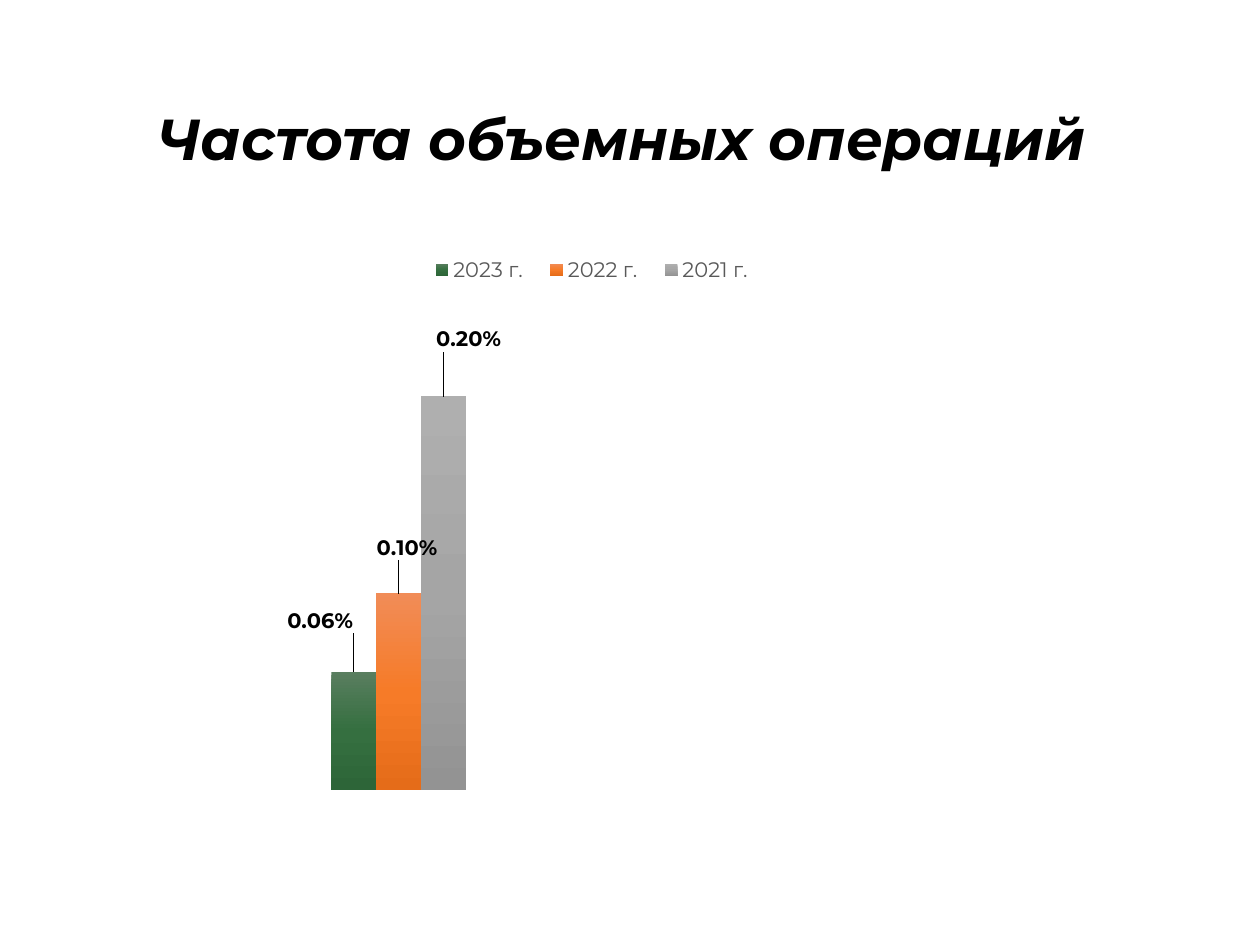
from lxml.etree import SubElement
from pptx import Presentation
from pptx.chart.data import CategoryChartData
from pptx.dml.color import RGBColor
from pptx.enum.chart import XL_CHART_TYPE, XL_LABEL_POSITION, XL_LEGEND_POSITION
from pptx.enum.text import MSO_ANCHOR, PP_ALIGN
from pptx.oxml import parse_xml
from pptx.oxml.ns import nsdecls, qn
from pptx.util import Inches, Pt

BLACK = RGBColor(0x00, 0x00, 0x00)
GREY = RGBColor(0x59, 0x59, 0x59)
GREENS = [RGBColor(0x59, 0x7E, 0x5F), RGBColor(0x35, 0x6F, 0x40), RGBColor(0x2D, 0x65, 0x38)]
ORANGES = [RGBColor(0xF1, 0x8C, 0x57), RGBColor(0xF6, 0x7B, 0x28), RGBColor(0xE5, 0x6C, 0x19)]
GREYS = [RGBColor(0xAF, 0xAF, 0xAF), RGBColor(0xA5, 0xA5, 0xA5), RGBColor(0x93, 0x93, 0x93)]
SERIES = [
    ("2023 г.", 0.0006, GREENS, (-0.04, -0.06)),
    ("2022 г.", 0.001, ORANGES, (0.01, -0.05)),
    ("2021 г.", 0.002, GREYS, (0.03, -0.07)),
]
CATEGORIES = ["1", "2", "3", "4"]
PERCENT = "0.00%"


def set_font(font, size, color=BLACK, name="Montserrat", bold=False, italic=False):
    font.size, font.name, font.bold, font.italic = Pt(size), name, bold, italic
    font.color.rgb = color


def write(tf, text, align=PP_ALIGN.CENTER, spacing=0.9, **style):
    p = tf.paragraphs[0]
    p.alignment, p.line_spacing = align, spacing
    r = p.add_run()
    r.text = text
    set_font(r.font, **style)


def manual_layout(**values):
    layout = parse_xml(f"<c:layout {nsdecls('c')}><c:manualLayout/></c:layout>")
    for tag, val in values.items():
        SubElement(layout[0], qn(f"c:{tag}"), val=str(val))
    return layout


def fill_gradient(sp_pr, colors):
    stops = "".join(
        f'<a:gs pos="{i * 50000}"><a:srgbClr val="{c}"/></a:gs>' for i, c in enumerate(colors)
    )
    sp_pr.insert(0, parse_xml(
        f"<a:gradFill {nsdecls('a')}><a:gsLst>{stops}</a:gsLst>"
        '<a:lin ang="5400000" scaled="0"/></a:gradFill>'
    ))


class Deck:
    """Holds the slide and places elements by percent of its size."""

    def __init__(self):
        self.prs = Presentation()
        self.prs.slide_width, self.prs.slide_height = Inches(10), Inches(7.5)
        self.s = self.prs.slides.add_slide(self.prs.slide_layouts[6])

    def box(self, x, y, w, h):
        width, height = self.prs.slide_width, self.prs.slide_height
        return [int(share * side / 100) for share, side in zip((x, y, w, h), (width, height) * 2)]

    def title(self, text, *area):
        tf = self.s.shapes.add_textbox(*self.box(*area)).text_frame
        tf.word_wrap, tf.vertical_anchor = True, MSO_ANCHOR.MIDDLE
        write(tf, text, size=33, bold=True, italic=True)

    def column_chart(self, *area):
        data = CategoryChartData(number_format=PERCENT)
        data.categories = CATEGORIES
        for name, value, *_ in SERIES:
            data.add_series(name, [value] + [None] * (len(CATEGORIES) - 1))
        chart = self.s.shapes.add_chart(
            XL_CHART_TYPE.COLUMN_CLUSTERED, *self.box(*area), data
        ).chart
        set_font(chart.font, 10, name="Calibri")
        chart.has_title = False
        self.hide_axes(chart)
        self.legend(chart)
        plot = chart.plots[0]
        plot.gap_width, plot.overlap, plot.vary_by_categories = 150, 0, False
        for ser, (_, _, colors, shift) in zip(plot.series, SERIES):
            fill_gradient(ser.format.fill and ser._element.get_or_add_spPr(), colors)
            self.value_label(ser, *shift)

    def hide_axes(self, chart):
        axis = chart.value_axis
        axis.minimum_scale, axis.maximum_scale = 0, 0.0025
        axis.has_major_gridlines = False
        axis.tick_labels.number_format = PERCENT
        axis.tick_labels.number_format_is_linked = False
        axis.visible = chart.category_axis.visible = False
        area = chart._chartSpace.chart.plotArea
        for old in area.findall(qn("c:layout")):
            area.remove(old)
        area.insert(0, manual_layout(
            layoutTarget="inner", xMode="edge", yMode="edge", x=0.02, y=0.1, w=0.96, h=0.88
        ))

    def legend(self, chart):
        chart.has_legend = True
        legend = chart.legend
        legend.position, legend.include_in_layout = XL_LEGEND_POSITION.TOP, False
        set_font(legend.font, 12, GREY)
        for old in legend._element.findall(qn("c:layout")):
            legend._element.remove(old)
        legend._element.find(qn("c:legendPos")).addnext(manual_layout(
            xMode="edge", yMode="edge", x=0.16, y=0.02, w=0.42, h=0.06
        ))

    def value_label(self, ser, x, y):
        labels = ser.data_labels
        labels.show_value = True
        labels.number_format, labels.number_format_is_linked = PERCENT, False
        set_font(labels.font, 12, bold=True)
        label = ser.points[0].data_label
        label.position = XL_LABEL_POSITION.OUTSIDE_END
        set_font(label.font, 12, bold=True)
        idx = labels._element.find(qn("c:dLbl")).find(qn("c:idx"))
        idx.addnext(parse_xml(
            f'<c:numFmt {nsdecls("c")} formatCode="{PERCENT}" sourceLinked="0"/>'
        ))
        idx.addnext(manual_layout(x=x, y=y))


def main():
    deck = Deck()
    deck.title("Частота объемных операций ", 6.9, 5.33, 86.2, 19.33)
    deck.column_chart(22.3, 25.6, 66.7, 59.2)
    deck.prs.save("out.pptx")


if __name__ == "__main__":
    main()
